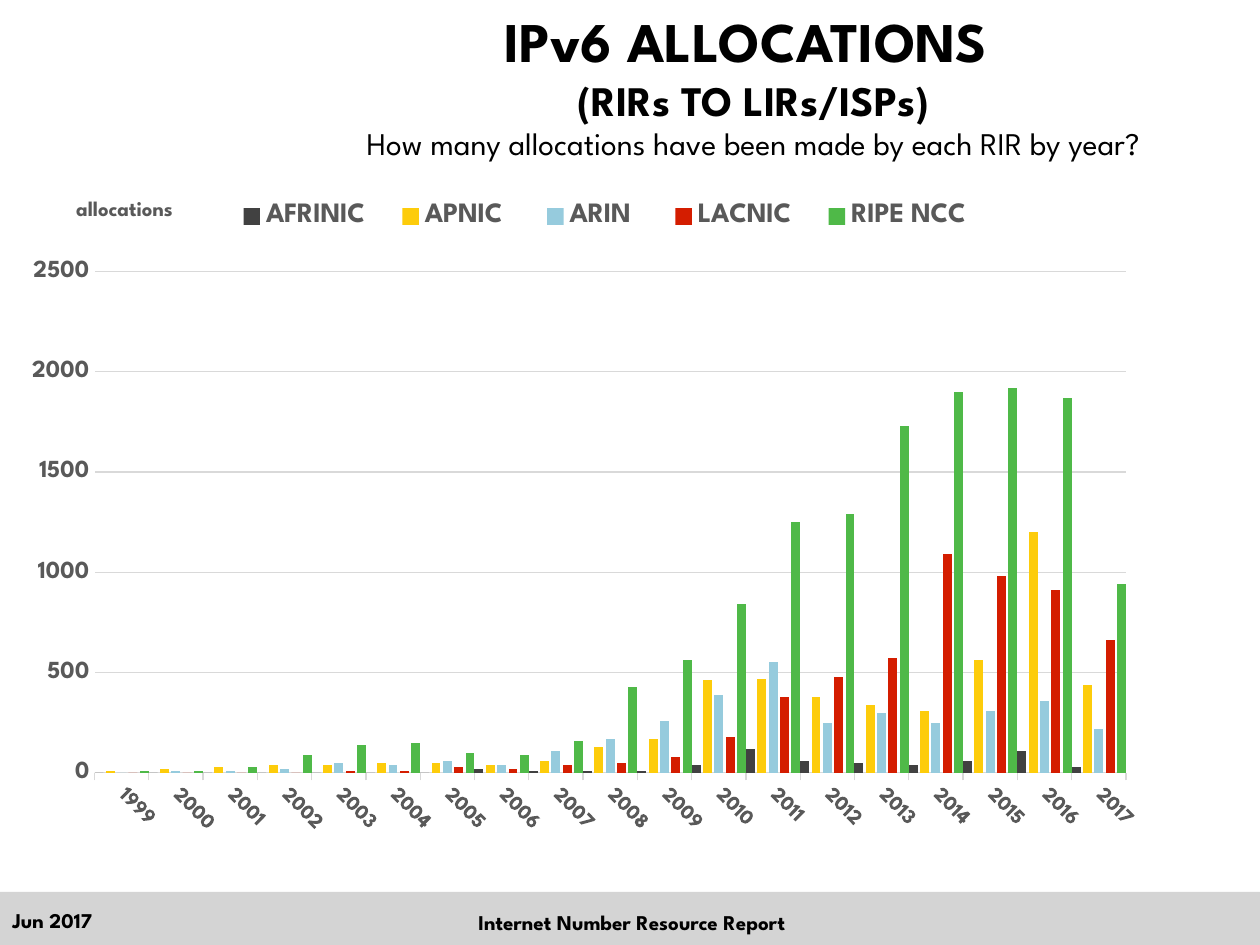
"""Build the slide on IPv6 allocations per registry and year."""
from dataclasses import dataclass

from lxml.etree import SubElement
from pptx import Presentation
from pptx.chart.data import CategoryChartData
from pptx.dml.color import RGBColor
from pptx.enum.chart import XL_CHART_TYPE, XL_LEGEND_POSITION, XL_TICK_MARK
from pptx.enum.shapes import MSO_SHAPE
from pptx.enum.text import MSO_ANCHOR, PP_ALIGN
from pptx.oxml.ns import qn
from pptx.util import Emu, Pt

EMU_PER_PX = 914400 / 126
FONT = "League Spartan"
COLORS = {
    "text": "000000", "axis": "595959", "grid": "D9D9D9", "footer": "D4D4D4",
    "afrinic": "414141", "apnic": "FDCC0B", "arin": "96CBDD",
    "lacnic": "D41D00", "ripe": "4FB948",
}


@dataclass
class TextRun:
    """One run of text, which starts a new line when it is not the first."""
    text: str
    size: int
    bold: bool = True


@dataclass
class TextBlock:
    """A text box with its place in px."""
    left: int
    top: int
    width: int
    height: int
    runs: list[TextRun]
    align: PP_ALIGN
    anchor: MSO_ANCHOR


@dataclass
class Registry:
    """The yearly allocations of one registry."""
    name: str
    color: str
    values: list[int]


TEXT_BLOCKS = [
    TextBlock(247, 0, 1013, 169, [
        TextRun("IPv6 ALLOCATIONS ", 32),
        TextRun("(RIRs TO LIRs/ISPs)", 24),
        TextRun("How many allocations have been made by each RIR by year?", 18, False),
    ], PP_ALIGN.CENTER, MSO_ANCHOR.MIDDLE),
    TextBlock(372, 903, 520, 32, [TextRun("Internet Number Resource Report", 12)],
              PP_ALIGN.CENTER, MSO_ANCHOR.TOP),
    TextBlock(0, 895, 284, 50, [TextRun("Jun 2017", 12)],
              PP_ALIGN.LEFT, MSO_ANCHOR.MIDDLE),
]
YEARS = range(1999, 2018)
REGISTRIES = [
    Registry("AFRINIC", "afrinic", [0, 0, 0, 0, 0, 0, 0, 20, 10, 10, 10, 40, 120,
                                    60, 50, 40, 60, 110, 30]),
    Registry("APNIC ", "apnic", [10, 20, 30, 40, 40, 50, 50, 40, 60, 130, 170, 460,
                                 470, 380, 340, 310, 560, 1200, 440]),
    Registry("ARIN ", "arin", [0, 10, 10, 20, 50, 40, 60, 40, 110, 170, 260, 390,
                               550, 250, 300, 250, 310, 360, 220]),
    Registry("LACNIC", "lacnic", [0, 0, 0, 0, 10, 10, 30, 20, 40, 50, 80, 180, 380,
                                  480, 570, 1090, 980, 910, 660]),
    Registry("RIPE NCC", "ripe", [10, 10, 30, 90, 140, 150, 100, 90, 160, 430, 560,
                                  840, 1250, 1290, 1730, 1900, 1920, 1870, 940]),
]


def px(length: int) -> Emu:
    """Turn px into EMU."""
    return Emu(round(length * EMU_PER_PX))


def rgb(name: str) -> RGBColor:
    """Look up a named colour."""
    return RGBColor.from_string(COLORS[name])


def style_font(font, size: int, color: str, bold: bool = True) -> None:
    """Set the face, size, weight and colour of a font."""
    font.name = FONT
    font.size = Pt(size)
    font.bold = bold
    font.color.rgb = rgb(color)


def add_text(slide, block: TextBlock) -> None:
    """Draw a text box run by run."""
    shape = slide.shapes.add_textbox(
        px(block.left), px(block.top), px(block.width), px(block.height))
    frame = shape.text_frame
    frame.word_wrap = True
    frame.vertical_anchor = block.anchor
    paragraph = frame.paragraphs[0]
    paragraph.alignment = block.align
    for index, text_run in enumerate(block.runs):
        if index:
            paragraph.add_line_break()
        run = paragraph.add_run()
        run.text = text_run.text
        style_font(run.font, text_run.size, "text", text_run.bold)


def add_footer_band(slide) -> None:
    """Draw the grey band along the bottom."""
    shape = slide.shapes.add_shape(MSO_SHAPE.RECTANGLE, 0, px(892), px(1260), px(53))
    shape.shadow.inherit = False
    shape.fill.solid()
    shape.fill.fore_color.rgb = rgb("footer")
    shape.line.fill.background()


def place(element, follows: str, **settings) -> None:
    """Give a chart part a manual layout, put right after the named child."""
    for old in element.findall(qn("c:layout")):
        element.remove(old)
    layout = SubElement(element, qn("c:layout"))
    manual = SubElement(layout, qn("c:manualLayout"))
    for tag, value in settings.items():
        SubElement(manual, qn(f"c:{tag}")).set("val", str(value))
    if follows:
        element.find(qn(follows)).addnext(layout)
    else:
        element.insert(0, layout)


def style_axes(chart) -> None:
    """Style both axes, the gridlines and the value axis title."""
    category_axis, value_axis = chart.category_axis, chart.value_axis
    style_font(category_axis.tick_labels.font, 12, "axis")
    category_axis.tick_labels.font._element.getparent().getparent().getparent().find(
        qn("a:bodyPr")).set("rot", "2700000")
    category_axis.major_tick_mark = XL_TICK_MARK.OUTSIDE
    style_font(value_axis.tick_labels.font, 14, "axis")
    value_axis.tick_labels.number_format = "0"
    value_axis.tick_labels.number_format_is_linked = False
    value_axis.major_tick_mark = XL_TICK_MARK.NONE
    value_axis.minimum_scale, value_axis.maximum_scale = 0, 2500
    value_axis.major_unit = 500
    value_axis.format.line.fill.background()
    for line in (category_axis.format.line, value_axis.major_gridlines.format.line):
        line.color.rgb = rgb("grid")
        line.width = Pt(0.75)
    title = value_axis.axis_title
    run = title.text_frame.paragraphs[0].add_run()
    run.text = "allocations"
    style_font(run.font, 12, "axis")
    title.text_frame._txBody.find(qn("a:bodyPr")).set("rot", "0")
    place(title._element, "c:tx", xMode="edge", yMode="edge", x=0.02, y=0.01)


def add_allocation_chart(slide) -> None:
    """Draw the clustered columns of allocations by year."""
    data = CategoryChartData(number_format="0")
    data.categories = YEARS
    for registry in REGISTRIES:
        data.add_series(registry.name, registry.values)
    chart = slide.shapes.add_chart(
        XL_CHART_TYPE.COLUMN_CLUSTERED, px(32), px(189), px(1116), px(687), data).chart
    chart.has_title = False
    chart.font.name = "Arial"
    chart.font.size = Pt(10)
    plot = chart.plots[0]
    plot.vary_by_categories = False
    plot.gap_width, plot.overlap = 0, -27
    for series, registry in zip(plot.series, REGISTRIES):
        series.format.fill.solid()
        series.format.fill.fore_color.rgb = rgb(registry.color)
    style_axes(chart)
    chart.has_legend = True
    legend = chart.legend
    legend.position = XL_LEGEND_POSITION.BOTTOM
    legend.include_in_layout = False
    style_font(legend.font, 16, "axis")
    place(legend._element, "c:legendPos", xMode="edge", yMode="edge",
          x=0.15, y=0.01, w=0.71, h=0.06)
    place(chart._chartSpace.chart.plotArea, "", layoutTarget="inner", xMode="edge",
          yMode="edge", x=0.04, y=0.12, w=0.94, h=0.73)


def main() -> None:
    """Build and save the presentation."""
    presentation = Presentation()
    presentation.slide_width, presentation.slide_height = px(1260), px(945)
    slide = presentation.slides.add_slide(presentation.slide_layouts[6])
    add_footer_band(slide)
    add_allocation_chart(slide)
    for block in TEXT_BLOCKS:
        add_text(slide, block)
    presentation.save("out.pptx")


if __name__ == "__main__":
    main()
